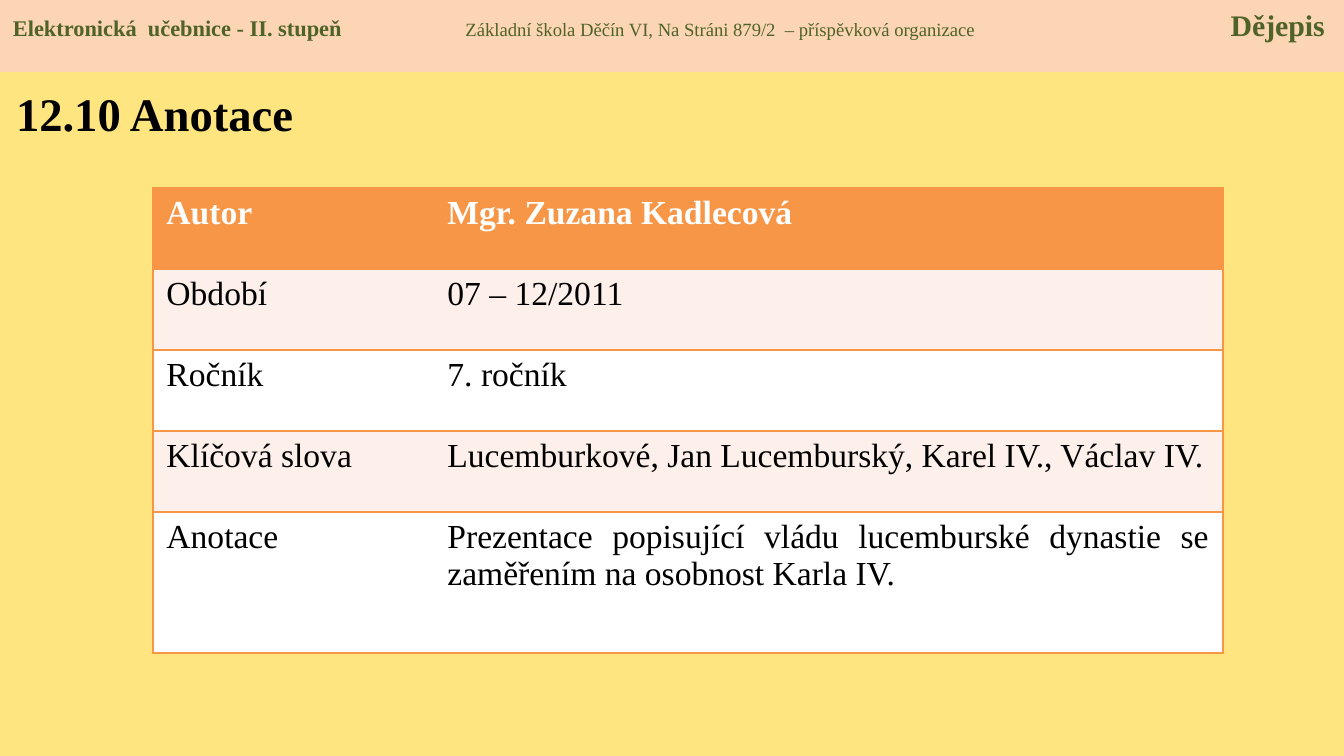
from lxml import etree
from pptx import Presentation
from pptx import util as u
from pptx.dml.color import RGBColor
from pptx.enum import shapes, text
from pptx.oxml.ns import qn

PX = 914400 / 134.4
ORANGE, GREEN = "F79646", "4F6228"
INSET = 13
ROWS = [
    ("Autor", "Mgr. Zuzana Kadlecová"),
    ("Období", "07 – 12/2011"),
    ("Ročník", "7. ročník"),
    ("Klíčová slova", "Lucemburkové, Jan Lucemburský, Karel IV., Václav IV."),
    ("Anotace", "Prezentace popisující vládu lucemburské dynastie "
                "se zaměřením na osobnost Karla IV."),
]


def px(n):
    return u.Emu(round(n * PX))


def paint(target, color):
    target.solid()
    target.fore_color.rgb = RGBColor.from_string(color)


def style(font, size, color, bold=False):
    form = {"name": "Times New Roman", "size": u.Pt(size), "bold": bold}
    for key, val in form.items():
        setattr(font, key, val)
    paint(font.fill, color)


def setup(frame):
    form = {"word_wrap": True, "auto_size": text.MSO_AUTO_SIZE.NONE,
            "vertical_anchor": text.MSO_ANCHOR.TOP,
            "margin_left": px(INSET), "margin_right": px(INSET),
            "margin_top": u.Inches(0.05), "margin_bottom": u.Inches(0.05)}
    for key, val in form.items():
        setattr(frame, key, val)


def header(slide, x, y, w, h):
    bar = slide.shapes.add_shape(shapes.MSO_SHAPE.RECTANGLE,
                                 px(x), px(y), px(w), px(h))
    bar.shadow.inherit = False
    paint(bar.fill, "FCD5B5")
    bar.line.fill.background()
    setup(bar.text_frame)
    para = bar.text_frame.paragraphs[0]
    para.alignment = text.PP_ALIGN.LEFT
    # Centre and right tab stops hold the school and the subject
    tabs = etree.SubElement(para._p.get_or_add_pPr(), qn("a:tabLst"))
    for pos, algn in ((720 - INSET, "ctr"), (w - 19 - INSET, "r")):
        etree.SubElement(tabs, qn("a:tab"), pos=str(px(pos)), algn=algn)
    for words, size, bold in (
            ("Elektronická  učebnice - II. stupeň", 12, True),
            ("\tZákladní škola Děčín VI, Na Stráni 879/2  – příspěvková organizace",
             10, False),
            ("\tDějepis", 16, True)):
        run = para.add_run()
        run.text = words
        style(run.font, size, GREEN, bold)


def title(slide, x, y, w, h):
    box = slide.shapes.title
    box.left, box.top, box.width, box.height = map(px, (x, y, w, h))
    setup(box.text_frame)
    box.text_frame.text = "12.10 Anotace"
    para = box.text_frame.paragraphs[0]
    para.alignment = text.PP_ALIGN.LEFT
    style(para.font, 25, "000000", True)


def edge(cell, sides):
    # Orange rules on the named sides, none on the others
    props = cell._tc.get_or_add_tcPr()
    for side in "LRTB":
        line = etree.SubElement(props, qn("a:ln" + side), w=str(u.Pt(1)))
        if side in sides:
            fill = etree.SubElement(line, qn("a:solidFill"))
            etree.SubElement(fill, qn("a:srgbClr"), val=ORANGE)
        else:
            etree.SubElement(line, qn("a:noFill"))


def table(slide, x, y, w, h):
    grid = slide.shapes.add_table(len(ROWS), 2, px(x), px(y), px(w), px(h)).table
    grid.first_row = grid.horz_banding = False
    for col, wide in zip(grid.columns, (281, w - 281)):
        col.width = px(wide)
    last = len(ROWS) - 1
    for r, row in enumerate(ROWS):
        grid.rows[r].height = px(81 if r < last else h - 81 * last)
        back = ORANGE if r == 0 else ("FFFFFF", "FDEFE9")[r % 2]
        for c, words in enumerate(row):
            cell = grid.cell(r, c)
            edge(cell, "LTB" if c == 0 else "RTB")
            paint(cell.fill, back)
            cell.text = words
            para = cell.text_frame.paragraphs[0]
            if c == 1 and r >= 3:
                para.alignment = text.PP_ALIGN.JUSTIFY
            style(para.runs[0].font, 18, "000000" if r else "FFFFFF", r == 0)


def main():
    deck = Presentation()
    deck.slide_width, deck.slide_height = px(1344), px(756)
    slide = deck.slides.add_slide(deck.slide_layouts[5])
    paint(slide.background.fill, "FFE580")
    header(slide, 0, 0, 1344, 72)
    title(slide, 3, 78, 563, 87)
    table(slide, 153, 188, 1070, 465)
    deck.save("out.pptx")


if __name__ == "__main__":
    main()
